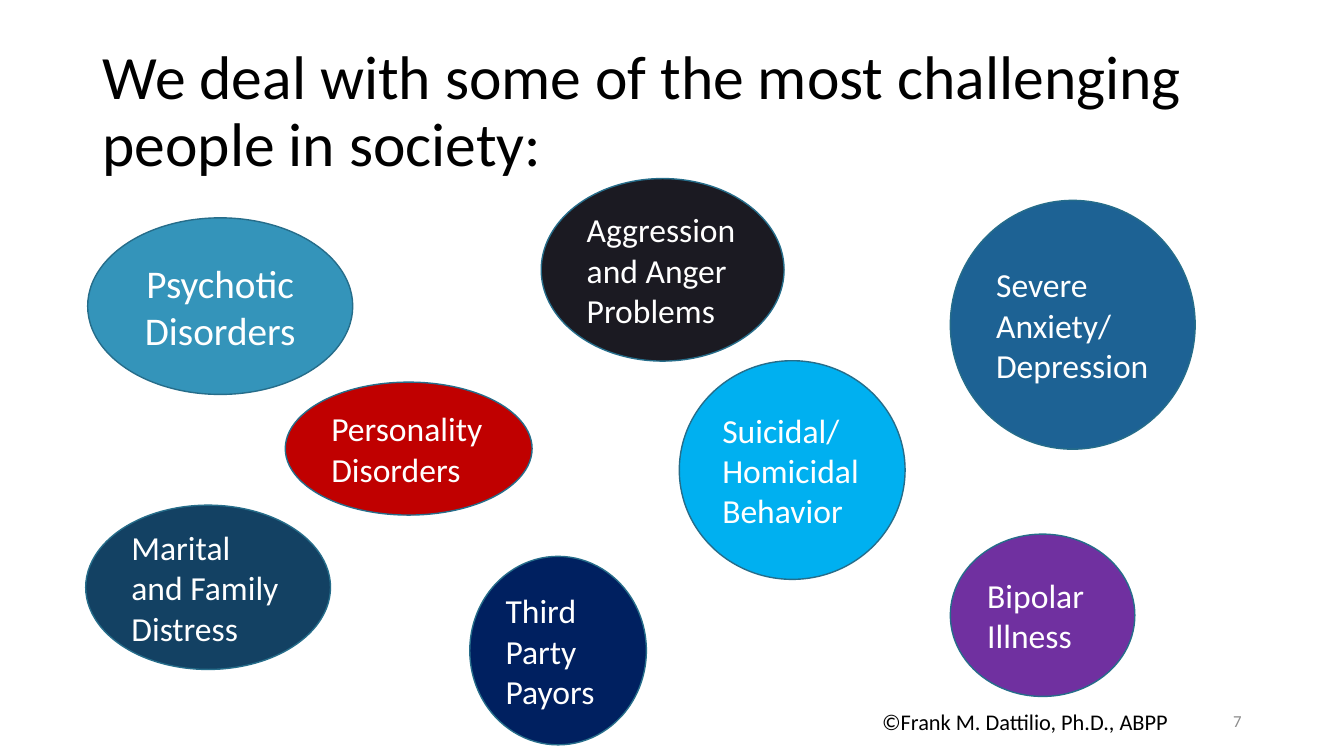
from pptx import Presentation
from pptx import util as u
from pptx.dml.color import RGBColor
from pptx.enum import shapes, text

TITLE = "We deal with some of the most challenging people in society:"
CREDIT = "©Frank M. Dattilio, Ph.D., ABPP"
PAGE = "7"
FONT = "Calibri"
OUTLINE = "266D8A"

# Each challenge: paragraphs, fill, (left, top, width, height) in cm
CHALLENGES = [
    (["Psychotic Disorders"], "3494BA", (2.21, 5.49, 6.68, 4.45)),
    (["Personality Disorders"], "C00000", (7.19, 9.63, 6.22, 3.35)),
    (["Severe Anxiety/", "Depression"], "1D6294", (23.95, 5.05, 6.17, 6.27)),
    (["Bipolar Illness"], "7030A0", (23.95, 13.46, 4.65, 4.09)),
    (["Suicidal/", "Homicidal Behavior"], "00B0F0", (17.12, 9.09, 5.69, 5.51)),
    (["Aggression and Anger Problems"], "1B1A22", (13.64, 4.5, 6.12, 4.6)),
    (["Marital and Family Distress"], "134163", (2.16, 12.73, 6.17, 4.14)),
    (["Third Party Payors"], "002060", (11.84, 14.02, 4.45, 4.75)),
]
LEAD = CHALLENGES[0]  # larger and centred


def color(value):
    return RGBColor.from_string(value)


def box(left, top, width, height):
    return u.Cm(left), u.Cm(top), u.Cm(width), u.Cm(height)


def write(shape, lines, size, ink="000000", align=text.PP_ALIGN.LEFT,
          anchor=text.MSO_ANCHOR.MIDDLE, spacing=1.0):
    frame = shape.text_frame
    frame.word_wrap = True
    frame.auto_size = text.MSO_AUTO_SIZE.NONE
    frame.vertical_anchor = anchor
    frame.text = "\n".join(lines)
    for paragraph in frame.paragraphs:
        paragraph.alignment = align
        paragraph.line_spacing = spacing
        paragraph.space_before = u.Pt(0)
        for run in paragraph.runs:
            run.font.name = FONT
            run.font.size = u.Pt(size)
            run.font.color.rgb = color(ink)


deck = Presentation()
deck.slide_width, deck.slide_height = u.Cm(33.87), u.Cm(19.05)
slide = deck.slides.add_slide(deck.slide_layouts[5])

# Title
title = slide.shapes.title
title.left, title.top, title.width, title.height = box(2.33, 1.01, 29.21, 3.68)
write(title, [TITLE], 44, spacing=0.9)

# Challenge ellipses
for challenge in CHALLENGES:
    lines, fill, place = challenge
    ellipse = slide.shapes.add_shape(shapes.MSO_SHAPE.OVAL, *box(*place))
    ellipse.shadow.inherit = False
    ellipse.fill.solid()
    ellipse.fill.fore_color.rgb = color(fill)
    ellipse.line.color.rgb = color(OUTLINE)
    ellipse.line.width = u.Pt(1)
    if challenge is LEAD:
        write(ellipse, lines, 28, "FFFFFF", text.PP_ALIGN.CENTER)
    else:
        write(ellipse, lines, 24, "FFFFFF")

# Page number and credit
page_number = slide.shapes.add_textbox(*box(23.92, 17.66, 7.62, 1.01))
write(page_number, [PAGE], 12, "8C8C8C", text.PP_ALIGN.RIGHT)
credit = slide.shapes.add_textbox(*box(21.98, 17.73, 9, 1.01))
write(credit, [CREDIT], 16, anchor=text.MSO_ANCHOR.TOP)

deck.save("out.pptx")
